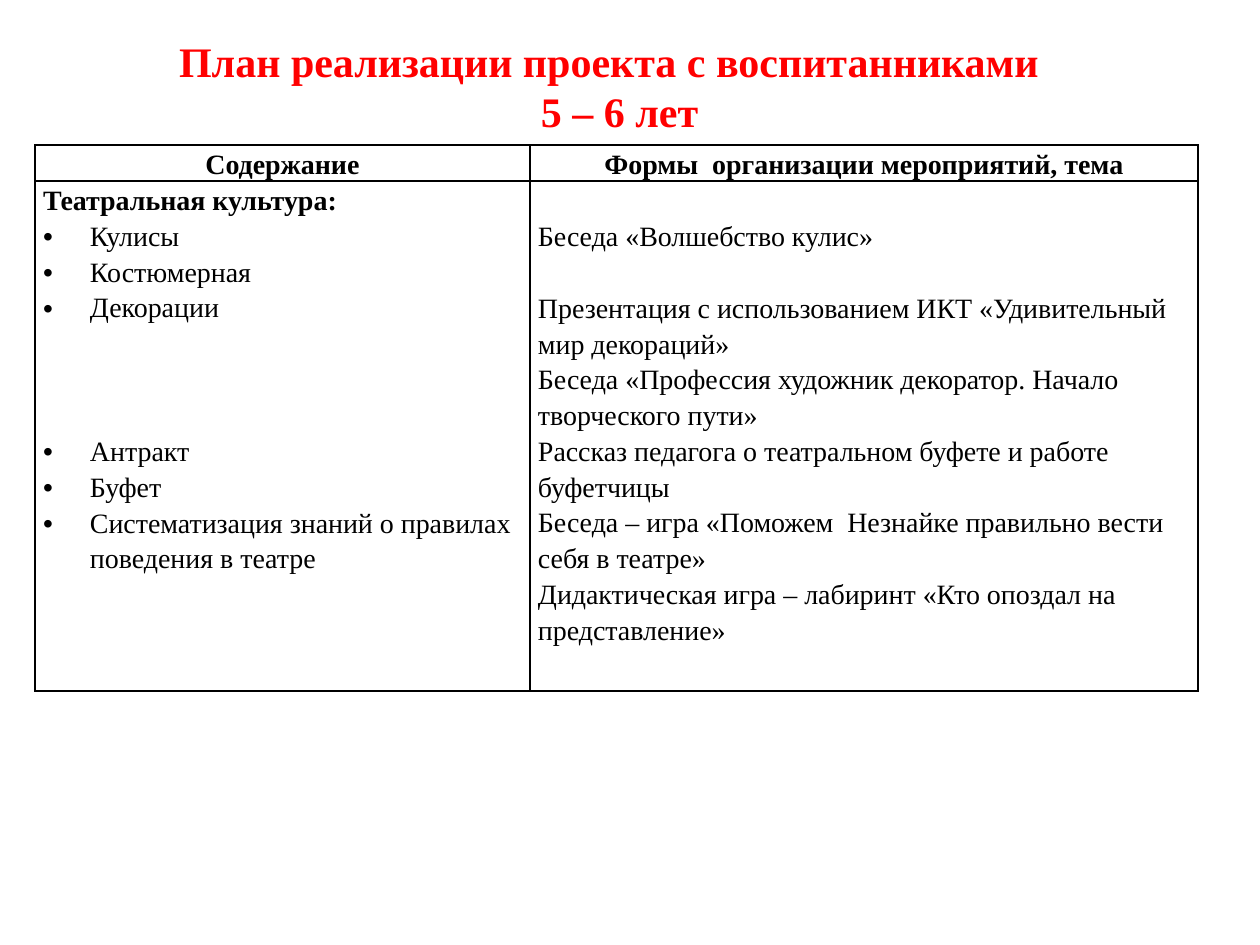
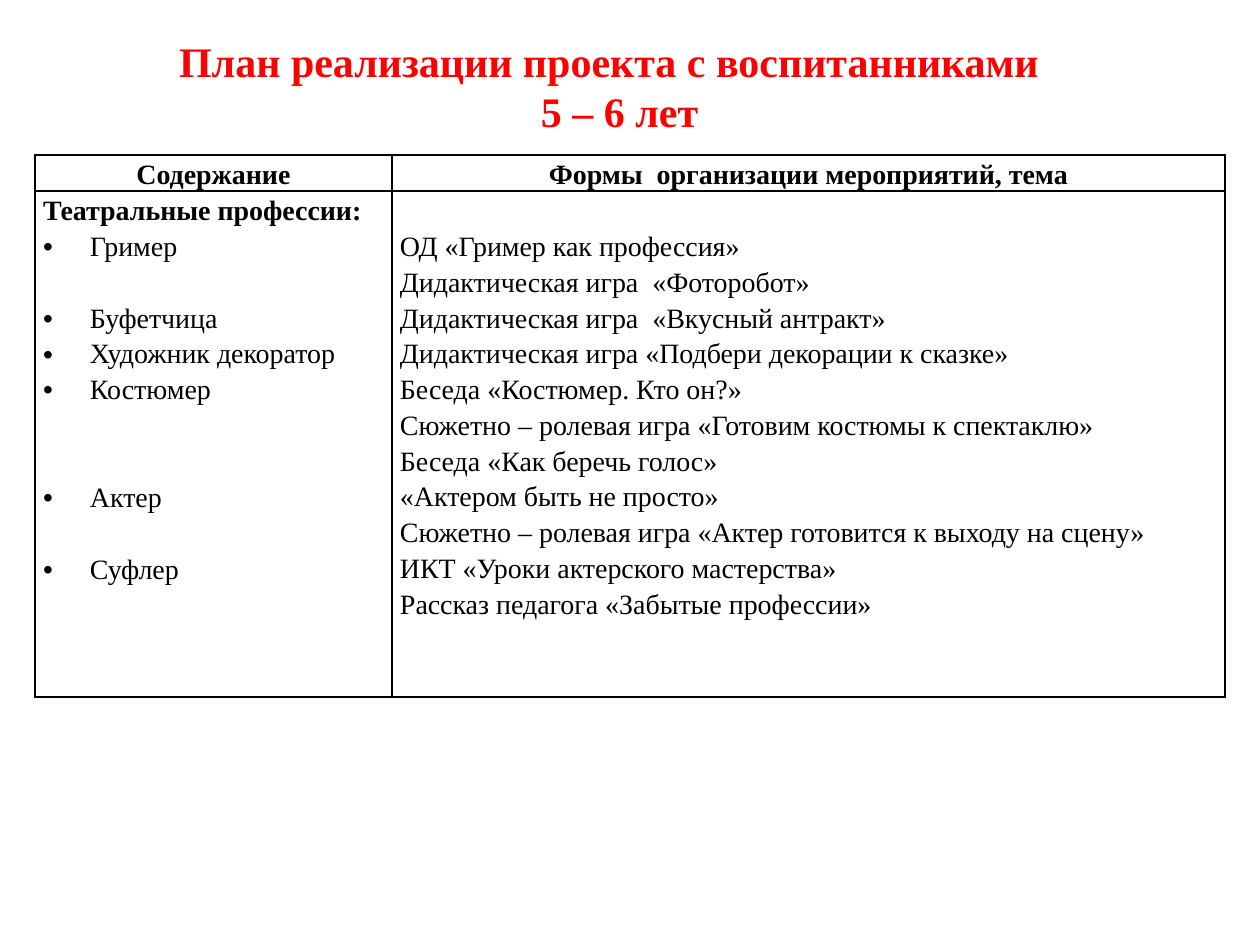
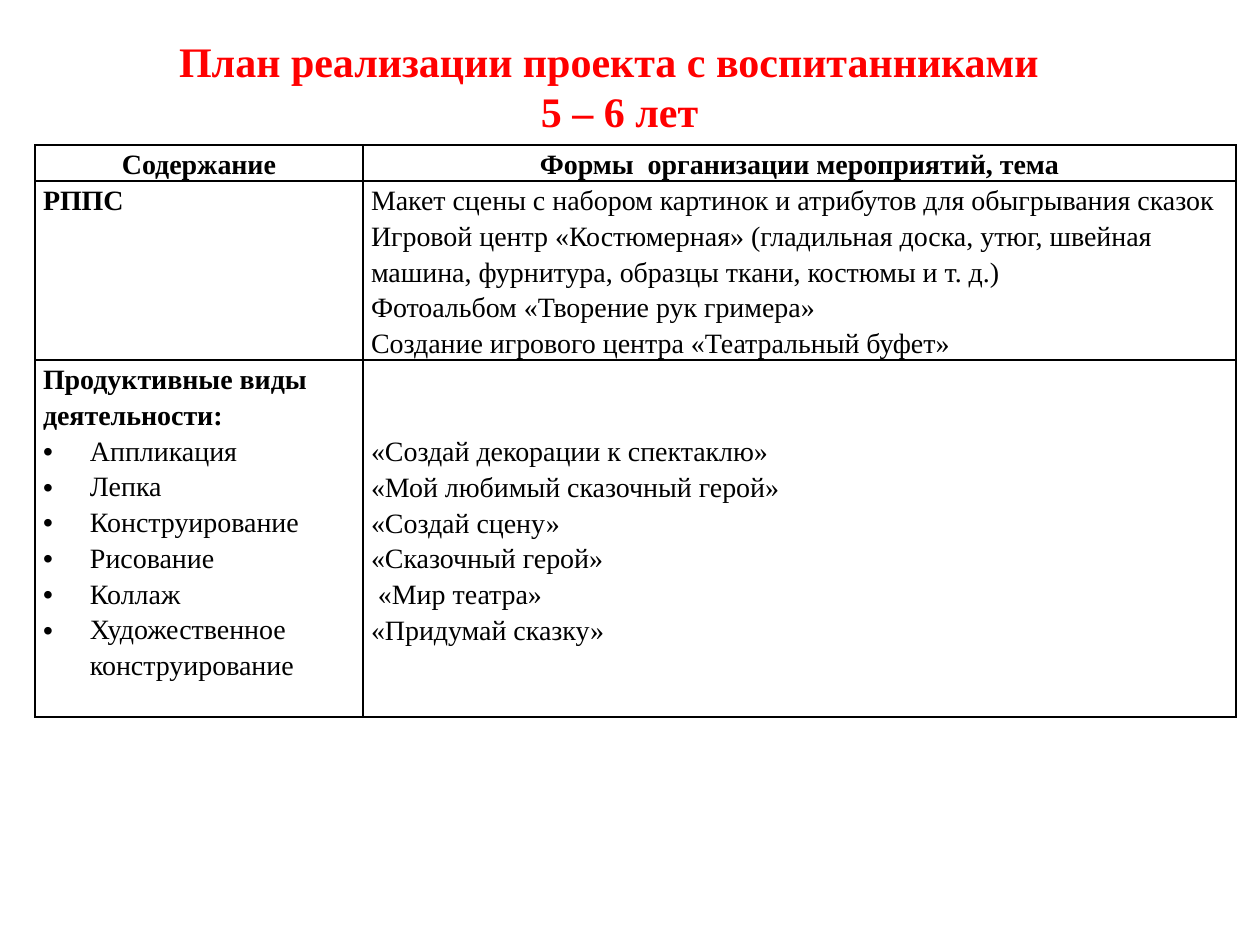
from dataclasses import dataclass

from lxml import etree
from pptx import Presentation
from pptx.dml.color import RGBColor
from pptx.enum.text import MSO_ANCHOR, MSO_AUTO_SIZE, PP_ALIGN
from pptx.oxml.ns import qn
from pptx.util import Emu, Pt

CENTER = PP_ALIGN.CENTER
MIDDLE = MSO_ANCHOR.MIDDLE
NO_AUTOFIT = MSO_AUTO_SIZE.NONE

EMU_PER_PX = 914400 / 126
SLIDE_SIZE = (1260, 945)
TITLE_BOX = (84, 16, 1071, 139)
TITLE_ONLY = 5
TABLE_LEFT = 35
HEADER_HEIGHT = 36
LINE_HEIGHT = 36
CELL_MARGIN = 8
BULLET_INDENT = 47
LINE_SPACING = 1.15
FONT = "Times New Roman"
RED, BLACK = "FF0000", "000000"

TITLE = ["План реализации проекта с воспитанниками  ", "5 – 6 лет"]
HEADINGS = ["Содержание", "Формы  организации мероприятий, тема"]


@dataclass
class Line:
    """A paragraph of a cell; gap counts the empty lines above it."""
    text: str
    gap: int = 0
    bold: bool = False
    bullet: bool = False
    centered: bool = False


def topic(text):
    return Line(text, bold=True)


def item(text, gap=0):
    return Line(text, gap, bullet=True)


PLANS = [
    {
        "top": 145,
        "columns": [495, 668],
        "rows": [
            (510, [
                [
                    topic("Театральная культура:"),
                    item("Кулисы"),
                    item("Костюмерная"),
                    item("Декорации"),
                    item("Антракт", gap=3),
                    item("Буфет"),
                    item("Систематизация знаний о правилах поведения в театре"),
                ],
                [
                    Line("Беседа «Волшебство кулис»", gap=1),
                    Line("Презентация с использованием ИКТ «Удивительный мир декораций»", gap=1),
                    Line("Беседа «Профессия художник декоратор. Начало творческого пути»"),
                    Line("Рассказ педагога о театральном буфете и работе буфетчицы"),
                    Line("Беседа – игра «Поможем  Незнайке правильно вести себя в театре»"),
                    Line("Дидактическая игра – лабиринт «Кто опоздал на представление»"),
                ],
            ]),
        ],
    },
    {
        "top": 155,
        "columns": [357, 833],
        "rows": [
            (506, [
                [
                    topic("Театральные профессии:"),
                    item("Гример"),
                    item("Буфетчица", gap=1),
                    item("Художник декоратор"),
                    item("Костюмер"),
                    item("Актер", gap=2),
                    item("Суфлер", gap=1),
                ],
                [
                    Line("ОД «Гример как профессия»", gap=1),
                    Line("Дидактическая игра  «Фоторобот»"),
                    Line("Дидактическая игра  «Вкусный антракт»"),
                    Line("Дидактическая игра «Подбери декорации к сказке»"),
                    Line("Беседа «Костюмер. Кто он?»"),
                    Line("Сюжетно – ролевая игра «Готовим костюмы к спектаклю»"),
                    Line("Беседа «Как беречь голос»"),
                    Line("«Актером быть не просто»"),
                    Line("Сюжетно – ролевая игра «Актер готовится к выходу на сцену»"),
                    Line("ИКТ «Уроки актерского мастерства»"),
                    Line("Рассказ педагога «Забытые профессии»"),
                ],
            ]),
        ],
    },
    {
        "top": 145,
        "columns": [328, 873],
        "rows": [
            (179, [
                [topic("РППС")],
                [
                    Line("Макет сцены с набором картинок и атрибутов для обыгрывания сказок"),
                    Line("Игровой центр «Костюмерная» (гладильная доска, утюг, швейная "
                         "машина, фурнитура, образцы ткани, костюмы и т. д.)"),
                    Line("Фотоальбом «Творение рук гримера»"),
                    Line("Создание игрового центра «Театральный буфет»"),
                ],
            ]),
            (357, [
                [
                    topic("Продуктивные виды деятельности:"),
                    item("Аппликация"),
                    item("Лепка"),
                    item("Конструирование"),
                    item("Рисование"),
                    item("Коллаж"),
                    item("Художественное конструирование"),
                ],
                [
                    Line("«Создай декорации к спектаклю»", gap=2),
                    Line("«Мой любимый сказочный герой»"),
                    Line("«Создай сцену»"),
                    Line("«Сказочный герой»"),
                    Line(" «Мир театра»"),
                    Line("«Придумай сказку»"),
                ],
            ]),
        ],
    },
]


def px(length):
    return Emu(round(length * EMU_PER_PX))


def rgb(color):
    return RGBColor.from_string(color)


def apply(target, formats):
    for name, value in formats.items():
        setattr(target, name, value)


def add_run(paragraph, text, size, color, bold):
    run = paragraph.add_run()
    run.text = text
    apply(run.font, {"name": FONT, "size": Pt(size), "bold": bold})
    run.font.color.rgb = rgb(color)


def add_bullet(paragraph):
    properties = paragraph._p.get_or_add_pPr()
    properties.set("marL", str(px(BULLET_INDENT)))
    properties.set("indent", str(-px(BULLET_INDENT)))
    etree.SubElement(properties, qn("a:buFont"), typeface="Arial")
    etree.SubElement(properties, qn("a:buChar"), char="•")


def add_borders(cell):
    properties = cell._tc.get_or_add_tcPr()
    for side in ("lnL", "lnR", "lnT", "lnB"):
        border = etree.SubElement(properties, qn(f"a:{side}"), w=str(Pt(1)))
        fill = etree.SubElement(border, qn("a:solidFill"))
        etree.SubElement(fill, qn("a:srgbClr"), val=BLACK)


def add_title(slide, box):
    title = slide.shapes.title
    apply(title, dict(zip(("left", "top", "width", "height"), map(px, box))))
    frame = title.text_frame
    apply(frame, {"vertical_anchor": MIDDLE, "auto_size": NO_AUTOFIT, "word_wrap": True})
    for index, text in enumerate(TITLE):
        paragraph = frame.add_paragraph() if index else frame.paragraphs[0]
        paragraph.alignment = CENTER
        add_run(paragraph, text, 24, RED, True)


def fill_cell(cell, lines):
    add_borders(cell)
    cell.fill.background()
    apply(cell, {
        "margin_left": px(CELL_MARGIN),
        "margin_right": px(CELL_MARGIN),
        "margin_top": px(lines[0].gap * LINE_HEIGHT),
        "margin_bottom": 0,
    })
    for index, line in enumerate(lines):
        paragraph = cell.text_frame.add_paragraph() if index else cell.text_frame.paragraphs[0]
        paragraph.line_spacing = LINE_SPACING
        if index and line.gap:
            paragraph.space_before = px(line.gap * LINE_HEIGHT)
        if line.centered:
            paragraph.alignment = CENTER
        if line.bullet:
            add_bullet(paragraph)
        add_run(paragraph, line.text, 16, BLACK, line.bold)


def add_plan_table(slide, left, top, columns, rows):
    header = [[Line(text, bold=True, centered=True)] for text in HEADINGS]
    rows = [(HEADER_HEIGHT, header), *rows]
    height = sum(row_height for row_height, _ in rows)
    table = slide.shapes.add_table(
        len(rows), len(columns), px(left), px(top), px(sum(columns)), px(height)).table
    apply(table, {"first_row": False, "horz_banding": False})
    for column, width in zip(table.columns, columns):
        column.width = px(width)
    for row, (row_height, contents) in zip(table.rows, rows):
        row.height = px(row_height)
        for cell, lines in zip(row.cells, contents):
            fill_cell(cell, lines)


def main():
    presentation = Presentation()
    presentation.slide_width, presentation.slide_height = map(px, SLIDE_SIZE)
    for plan in PLANS:
        slide = presentation.slides.add_slide(presentation.slide_layouts[TITLE_ONLY])
        add_title(slide, TITLE_BOX)
        add_plan_table(slide, TABLE_LEFT, **plan)
    presentation.save("out.pptx")


if __name__ == "__main__":
    main()
